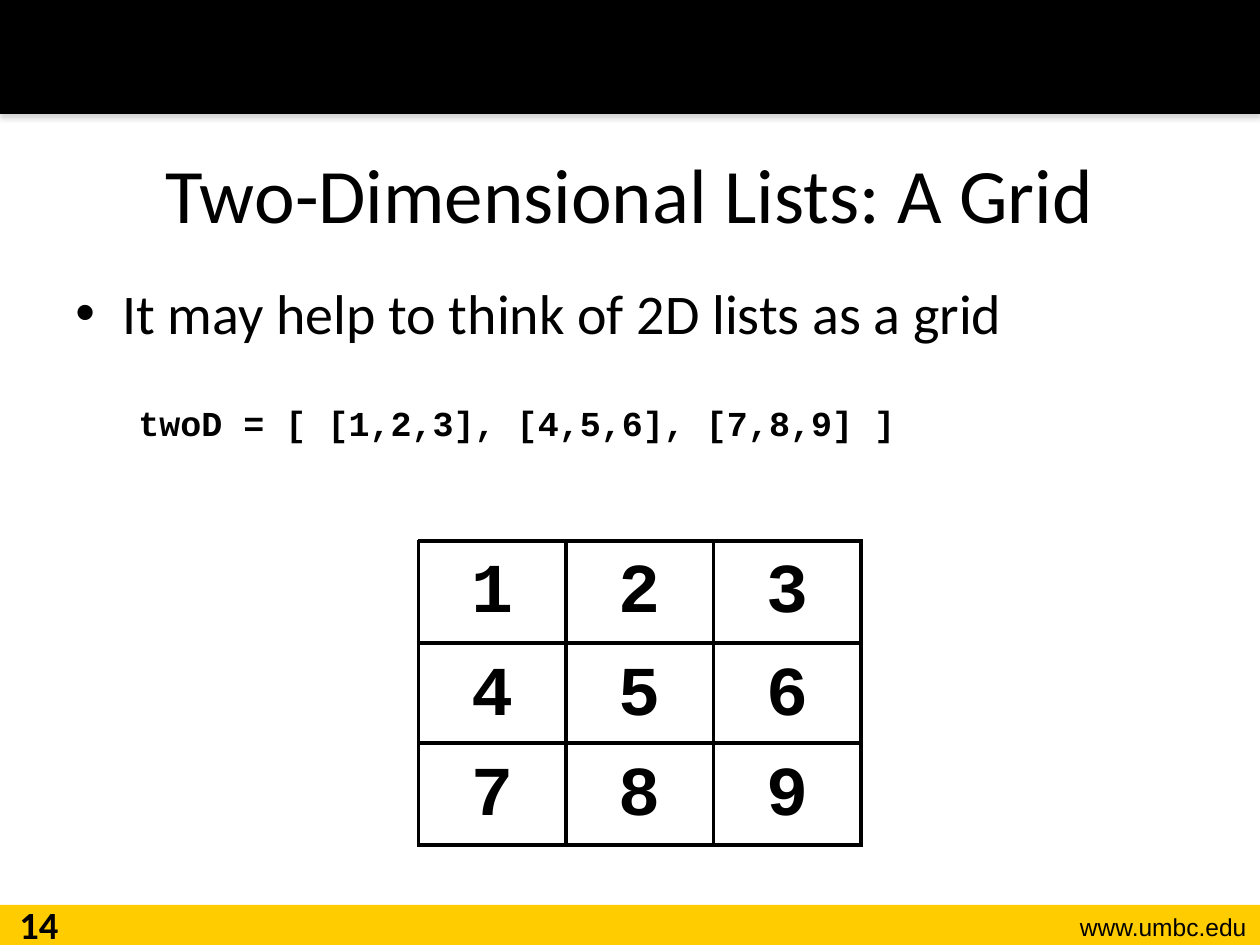
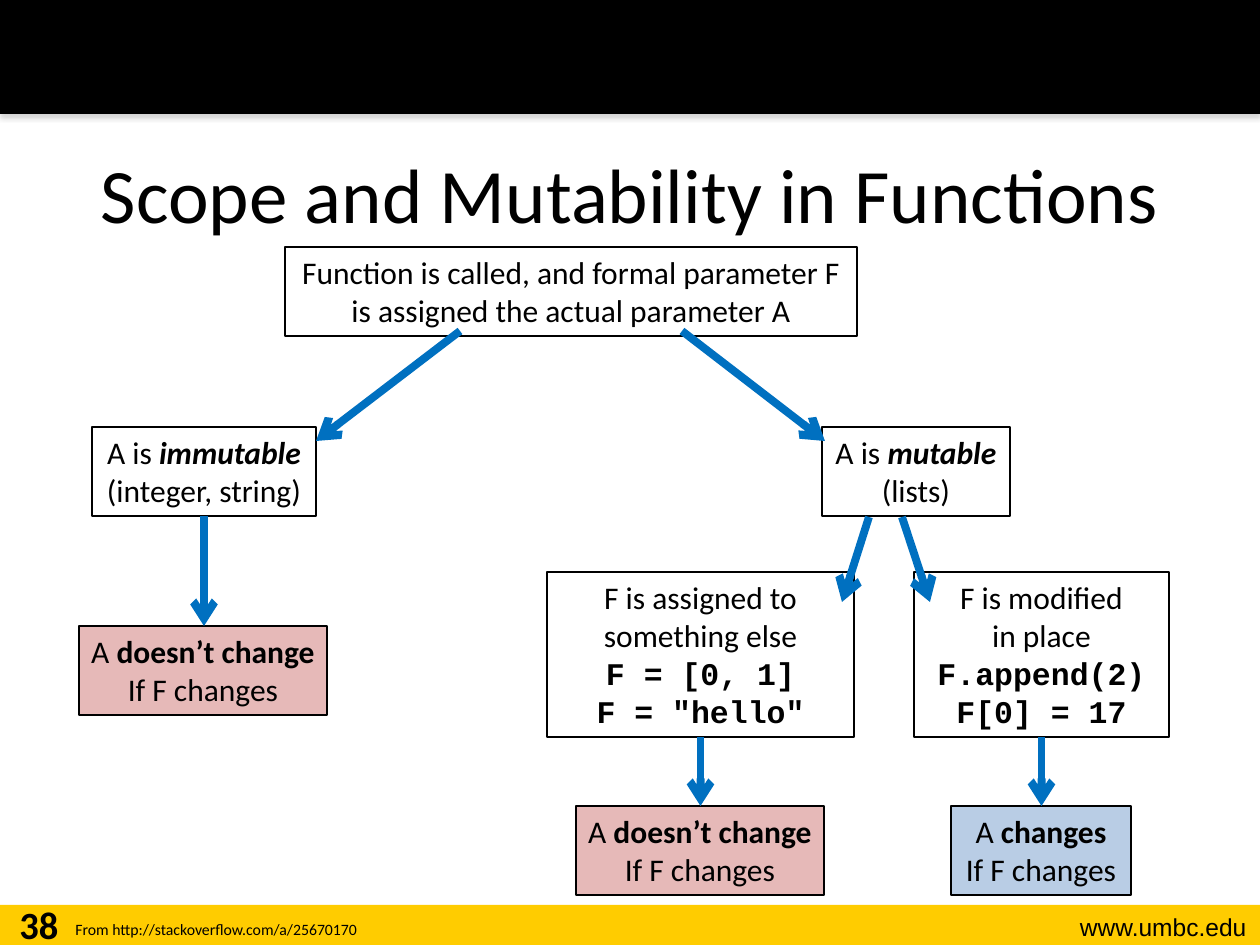
from pptx import Presentation
from pptx.dml.color import RGBColor
from pptx.enum.shapes import MSO_CONNECTOR, MSO_SHAPE
from pptx.enum.text import MSO_ANCHOR, PP_ALIGN
from pptx.oxml import parse_xml
from pptx.oxml.ns import nsdecls, qn
from pptx.util import Pt
from lxml.etree import SubElement

THEME = {
    "color": {"ink": "000000", "paper": "FFFFFF", "gold": "FFCC00", "shade": "808080",
              "rose": "E6B9B8", "sky": "B9CDE5", "arrow": "0070C0"},
    "style": {
        "title": ("Calibri", 44, False, False),
        "point": ("Calibri", 32, False, False),
        "script": ("Courier New", 20, True, False),
        "digit": ("Courier New", 40, True, False),
        "plain": ("Calibri", 18, False, False),
        "bold": ("Calibri", 18, True, False),
        "stress": ("Calibri", 18, True, True),
        "code": ("Courier New", 18, True, False),
        "number": ("Calibri", 22, True, False),
        "site": ("Arial", 14, False, False),
        "credit": ("Calibri", 9, False, False),
    },
    "rule": {"box": 0.75, "cell": 2.25, "arrow": 4.5},
}
SITE = "www.umbc.edu"

GRID = {
    "title": "Two-Dimensional Lists: A Grid",
    "number": "14",
    "point": "It may help to think of 2D lists as a grid",
    "script": "twoD = [ [1,2,3], [4,5,6], [7,8,9] ]",
    "tables": [
        (474, [["", "", "", ""], ["", "1", "2", "3"]]),
        (643, [["", "4", "5", "6"]]),
        (743, [["", "7", "8", "9"]]),
    ],
}

SAME = [[("A ", "plain"), ("doesn’t change", "bold")], [("If F changes", "plain")]]
SCOPE = {
    "title": "Scope and Mutability in Functions",
    "number": "38",
    "credit": "From http://stackoverflow.com/a/25670170",
    "boxes": {
        "call": ((285, 247, 572, 89), None, [
            [("Function is called, and formal parameter F", "plain")],
            [("is assigned the actual parameter A", "plain")]]),
        "fixed": ((92, 427, 224, 89), None, [
            [("A is ", "plain"), ("immutable", "stress")],
            [("(integer, string)", "plain")]]),
        "mutable": ((822, 427, 188, 89), None, [
            [("A is ", "plain"), ("mutable", "stress")],
            [("(lists)", "plain")]]),
        "same": ((79, 626, 248, 89), "rose", SAME),
        "assign": ((547, 572, 307, 165), None, [
            [("F is assigned to something else", "plain")],
            [("F = [0, 1]", "code")],
            [('F = "hello"', "code")]]),
        "modify": ((914, 572, 255, 165), None, [
            [("F is modified\vin place", "plain")],
            [("F.append(2)", "code")],
            [("F[0] = 17", "code")]]),
        "kept": ((576, 806, 248, 89), "rose", SAME),
        "changed": ((951, 806, 180, 89), "sky", [
            [("A ", "plain"), ("changes", "bold")],
            [("If F changes", "plain")]]),
    },
    "slants": [(460, 331, 316, 441), (682, 331, 825, 441),
               (869, 517, 842, 602), (902, 517, 930, 602)],
    "drops": [("fixed", "same"), ("assign", "kept"), ("modify", "changed")],
}


def px(n):
    return round(n * 914400 / 126)


def place(*spot):
    return [px(n) for n in spot]


def tint(name):
    return RGBColor.from_string(THEME["color"][name])


def dress(run, style):
    face, size, bold, slant = THEME["style"][style]
    font = run.font
    font.name, font.size, font.bold, font.italic = face, Pt(size), bold, slant
    font.color.rgb = tint("ink")


def write(frame, lines, align=PP_ALIGN.CENTER):
    for at, line in enumerate(lines):
        para = frame.add_paragraph() if at else frame.paragraphs[0]
        para.alignment = align
        for spot, (text, style) in enumerate(line):
            if spot:
                run = para.add_run()
                run.text = text
                dress(run, style)
            else:
                para.text = text
                for run in para.runs:
                    dress(run, style)


def label(slide, spot, text, style, align, anchor=MSO_ANCHOR.TOP):
    frame = slide.shapes.add_textbox(*place(*spot)).text_frame
    frame.word_wrap = True
    frame.vertical_anchor = anchor
    write(frame, [[(text, style)]], align)


def block(slide, spot, fill, edge=False):
    shape = slide.shapes.add_shape(MSO_SHAPE.RECTANGLE, *place(*spot))
    shape.shadow.inherit = False
    if fill:
        shape.fill.solid()
        shape.fill.fore_color.rgb = tint(fill)
    else:
        shape.fill.background()
    if edge:
        shape.line.color.rgb = tint("ink")
        shape.line.width = Pt(THEME["rule"]["box"])
    else:
        shape.line.fill.background()
    return shape


def base(deck, data):
    slide = deck.slides.add_slide(deck.slide_layouts[6])
    block(slide, (0, 905, 1260, 40), "gold")
    band = block(slide, (0, 0, 1260, 114), "ink")
    band.element.spPr.find(qn("a:effectLst")).append(parse_xml(
        f'<a:outerShdw {nsdecls("a")} blurRad="{Pt(3.1)}" dist="{Pt(1.8)}" dir="5400000" '
        f'rotWithShape="0"><a:srgbClr val="{THEME["color"]["shade"]}">'
        '<a:alpha val="35000"/></a:srgbClr></a:outerShdw>'))
    label(slide, (1008, 906, 251, 43), SITE, "site", PP_ALIGN.RIGHT)
    label(slide, (63, 114, 1134, 158), data["title"], "title",
          PP_ALIGN.CENTER, MSO_ANCHOR.MIDDLE)
    label(slide, (0, 895, 78, 50), data["number"], "number", PP_ALIGN.CENTER)
    return slide


def rule(cell, sides):
    props = cell._tc.get_or_add_tcPr()
    for side in sides:
        props.append(parse_xml(
            f'<a:ln{side} {nsdecls("a")} w="{Pt(THEME["rule"]["cell"])}"><a:solidFill>'
            f'<a:srgbClr val="{THEME["color"]["ink"]}"/></a:solidFill></a:ln{side}>'))


def table(slide, top, rows):
    wide = len(rows[0])
    highs = [97 if any(row) else 67 for row in rows]
    grid = slide.shapes.add_table(len(rows), wide,
                                  *place(271, top, 590, sum(highs))).table
    grid.first_row = grid.horz_banding = False
    for col in grid.columns:
        col.width = px(590 / wide)
    for y, row in enumerate(rows):
        grid.rows[y].height = px(highs[y])
        for x, text in enumerate(row):
            cell = grid.cell(y, x)
            if text:
                rule(cell, "LRTB")
                cell.margin_left = cell.margin_right = px(16)
                cell.margin_top = cell.margin_bottom = px(9)
                cell.vertical_anchor = MSO_ANCHOR.BOTTOM
                write(cell.text_frame, [[(text, "digit")]])
            else:
                right = x + 1 < wide and row[x + 1]
                below = y + 1 < len(rows) and rows[y + 1][x]
                rule(cell, ("R" if right else "") + ("B" if below else ""))
            cell.fill.solid()
            cell.fill.fore_color.rgb = tint("paper")


def body(slide, data):
    frame = slide.shapes.add_textbox(*place(63, 272, 1134, 622)).text_frame
    frame.word_wrap = True
    write(frame, [[(data["point"], "point")], [(data["script"], "script")]], PP_ALIGN.LEFT)
    point, script = frame.paragraphs
    props = point._p.get_or_add_pPr()
    props.set("marL", str(px(47)))
    props.set("indent", str(px(-47)))
    SubElement(props, qn("a:buFont")).set("typeface", "Arial")
    SubElement(props, qn("a:buChar")).set("char", "•")
    script._p.get_or_add_pPr().set("marL", str(px(63)))
    script.space_before = Pt(32)


def arrow(slide, ends):
    line = slide.shapes.add_connector(MSO_CONNECTOR.STRAIGHT, *place(*ends))
    line.line.color.rgb = tint("arrow")
    line.line.width = Pt(THEME["rule"]["arrow"])
    props = line.element.spPr
    SubElement(props.find(qn("a:ln")), qn("a:tailEnd")).set("type", "arrow")
    SubElement(props, qn("a:effectLst"))


def main():
    deck = Presentation()
    deck.slide_width, deck.slide_height = place(1260, 945)

    slide = base(deck, GRID)
    body(slide, GRID)
    for top, rows in GRID["tables"]:
        table(slide, top, rows)

    slide = base(deck, SCOPE)
    label(slide, (63, 914, 580, 31), SCOPE["credit"], "credit", PP_ALIGN.LEFT)
    boxes = SCOPE["boxes"]
    for spot, fill, lines in boxes.values():
        frame = block(slide, spot, fill, True).text_frame
        frame.word_wrap = len(lines) > 2
        frame.vertical_anchor = MSO_ANCHOR.TOP
        write(frame, lines)
    for ends in SCOPE["slants"]:
        arrow(slide, ends)
    for start, end in SCOPE["drops"]:
        left, top, width, high = boxes[start][0]
        mid = left + width / 2
        arrow(slide, (mid, top + high, mid, boxes[end][0][1]))

    deck.save("out.pptx")


if __name__ == "__main__":
    main()
